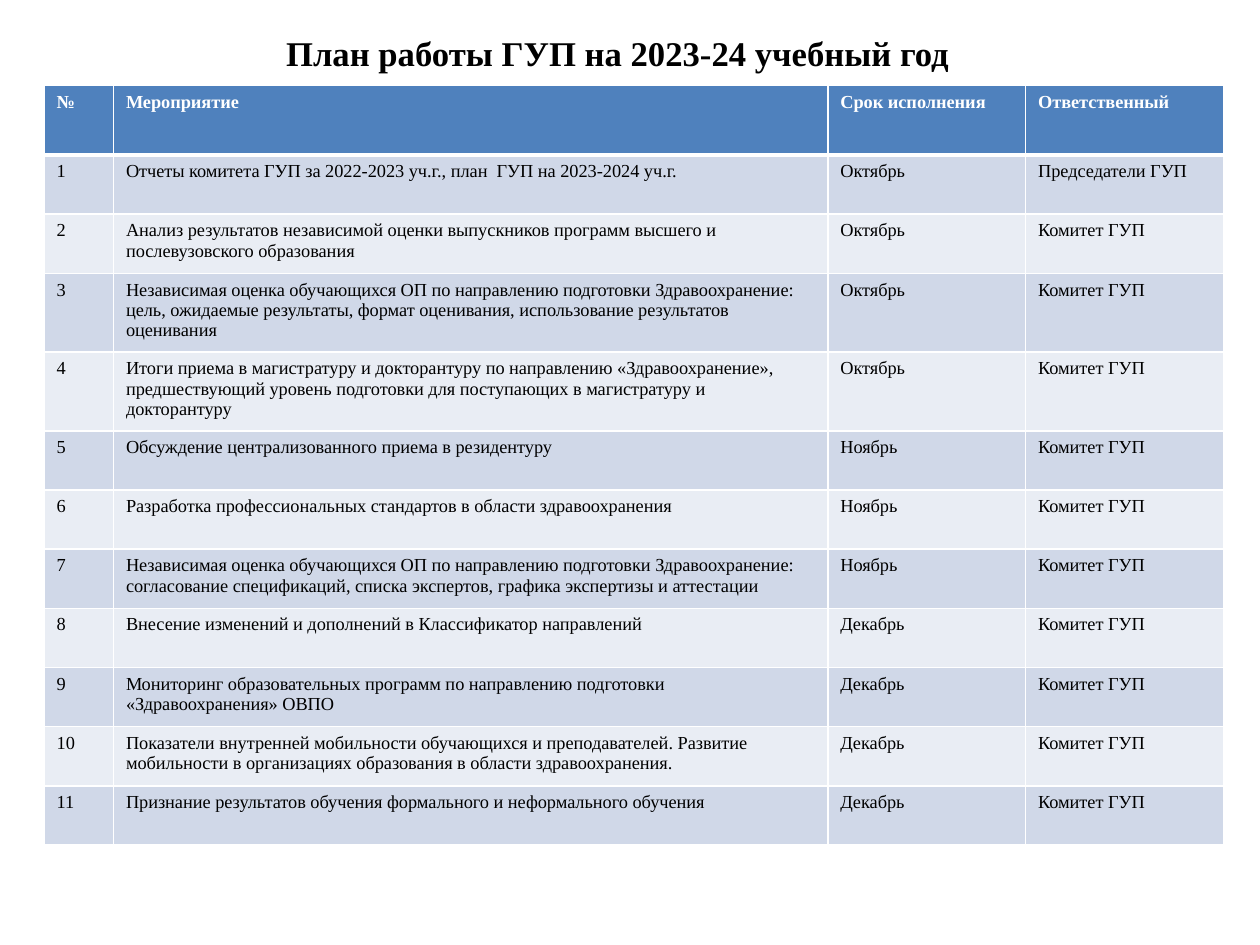
from lxml.etree import SubElement
from pptx import Presentation
from pptx.dml.color import RGBColor
from pptx.enum.text import MSO_ANCHOR, PP_ALIGN
from pptx.oxml.ns import qn
from pptx.util import Inches, Pt

COLUMN_WIDTHS = [0.55, 5.67, 1.57, 1.57]
HEADER_HEIGHT = 0.55
ROW_HEIGHT = 0.47
HEADER = ["№", "Мероприятие", "Срок исполнения", "Ответственный"]
COMMITTEE = "Комитет ГУП"
ACTIVITIES = [
    ("Отчеты комитета ГУП за 2022-2023 уч.г., план  ГУП на 2023-2024 уч.г.", "Октябрь", "Председатели ГУП"),
    ("Анализ результатов независимой оценки выпускников программ высшего и послевузовского образования", "Октябрь", COMMITTEE),
    ("Независимая оценка обучающихся ОП по направлению подготовки Здравоохранение: цель, ожидаемые результаты, формат оценивания, использование результатов оценивания", "Октябрь", COMMITTEE),
    ("Итоги приема в магистратуру и докторантуру по направлению «Здравоохранение», предшествующий уровень подготовки для поступающих в магистратуру и докторантуру", "Октябрь", COMMITTEE),
    ("Обсуждение централизованного приема в резидентуру", "Ноябрь", COMMITTEE),
    ("Разработка профессиональных стандартов в области здравоохранения", "Ноябрь", COMMITTEE),
    ("Независимая оценка обучающихся ОП по направлению подготовки Здравоохранение: согласование спецификаций, списка экспертов, графика экспертизы и аттестации", "Ноябрь", COMMITTEE),
    ("Внесение изменений и дополнений в Классификатор направлений", "Декабрь", COMMITTEE),
    ("Мониторинг образовательных программ по направлению подготовки «Здравоохранения» ОВПО", "Декабрь", COMMITTEE),
    ("Показатели внутренней мобильности обучающихся и преподавателей. Развитие мобильности в организациях образования в области здравоохранения.", "Декабрь", COMMITTEE),
    ("Признание результатов обучения формального и неформального обучения", "Декабрь", COMMITTEE),
]


def color(value):
    return RGBColor.from_string(value)


class PlanSlide:
    font = "Times New Roman"
    text_color = "000000"
    header_color = "FFFFFF"
    header_fill = "4F81BD"
    band_fills = ["E9EDF4", "D0D8E8"]
    border_color = "FFFFFF"

    def __init__(self, presentation):
        self.slide = presentation.slides.add_slide(presentation.slide_layouts[6])

    def add_text(self, paragraph, text, size, bold, font_color):
        run = paragraph.add_run()
        run.text = text
        values = {"name": self.font, "size": Pt(size), "bold": bold}
        for name, value in values.items():
            setattr(run.font, name, value)
        run.font.color.rgb = color(font_color)

    def title(self, text, left, top, width, height):
        shape = self.slide.shapes.add_textbox(
            Inches(left), Inches(top), Inches(width), Inches(height))
        values = {"word_wrap": True, "vertical_anchor": MSO_ANCHOR.MIDDLE}
        for name, value in values.items():
            setattr(shape.text_frame, name, value)
        paragraph = shape.text_frame.paragraphs[0]
        paragraph.alignment = PP_ALIGN.CENTER
        self.add_text(paragraph, text, 19.8, True, self.text_color)

    def borders(self, cell, widths):
        properties = cell._tc.get_or_add_tcPr()
        for side, width in widths.items():
            line = SubElement(properties, qn(f"a:ln{side}"), w=str(Pt(width)))
            fill = SubElement(line, qn("a:solidFill"))
            SubElement(fill, qn("a:srgbClr"), val=self.border_color)

    def cell(self, cell, text, row):
        is_header = row == 0
        self.borders(cell, {"L": 1, "R": 1, "T": 3 if row == 1 else 1, "B": 3 if is_header else 1})
        cell.fill.solid()
        cell.fill.fore_color.rgb = color(self.header_fill if is_header else self.band_fills[row % 2])
        font_color = self.header_color if is_header else self.text_color
        self.add_text(cell.text_frame.paragraphs[0], text, 10.5, is_header, font_color)

    def table(self, rows, left, top):
        heights = [HEADER_HEIGHT] + [ROW_HEIGHT] * (len(rows) - 1)
        table = self.slide.shapes.add_table(
            len(rows), len(COLUMN_WIDTHS), Inches(left), Inches(top),
            Inches(sum(COLUMN_WIDTHS)), Inches(sum(heights))).table
        for column, width in zip(table.columns, COLUMN_WIDTHS):
            column.width = Inches(width)
        for row, height in zip(table.rows, heights):
            row.height = Inches(height)
        for row, texts in enumerate(rows):
            for column, text in enumerate(texts):
                self.cell(table.cell(row, column), text, row)


def main():
    presentation = Presentation()
    presentation.slide_width = Inches(10)
    presentation.slide_height = Inches(7.5)
    plan = PlanSlide(presentation)
    plan.title("План работы ГУП на 2023-24 учебный год", 0, 0, 9.8, 0.84)
    activities = [(str(number), *activity) for number, activity in enumerate(ACTIVITIES, 1)]
    plan.table([HEADER, *activities], 0.35, 0.68)
    presentation.save("out.pptx")


if __name__ == "__main__":
    main()
